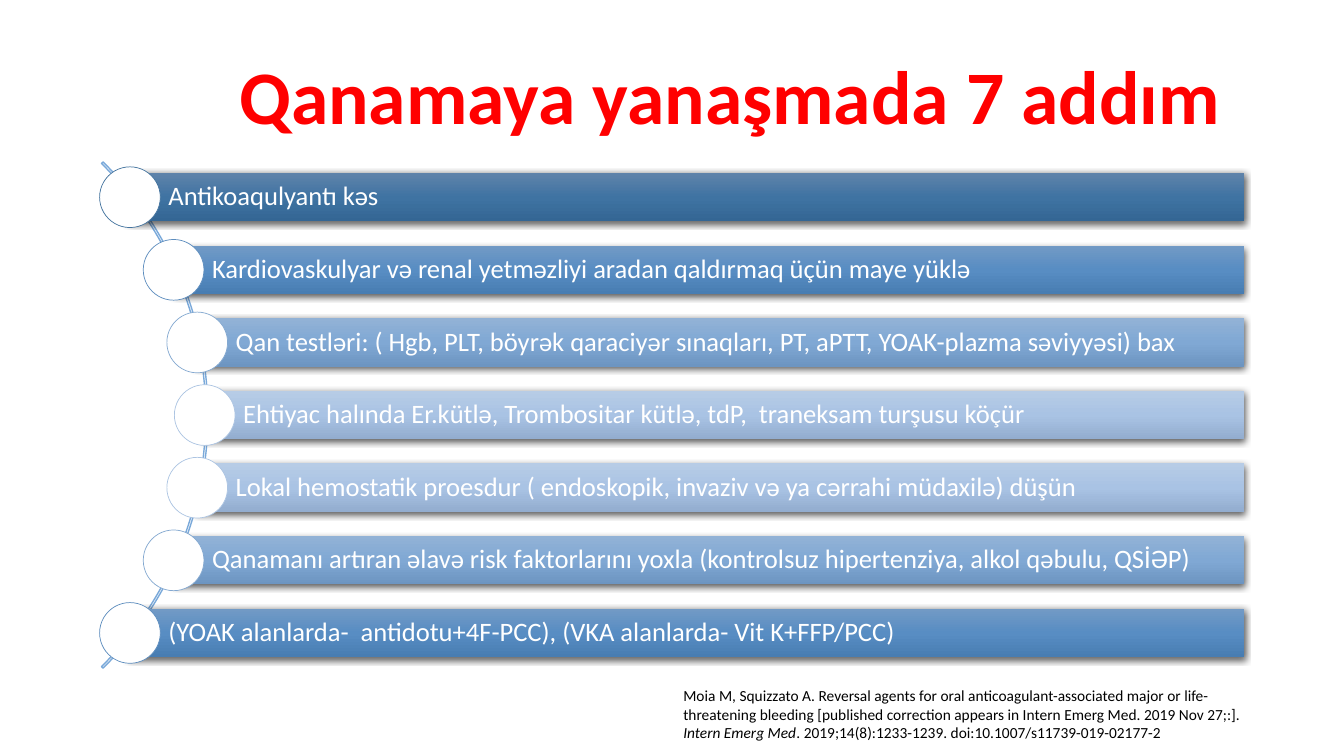
from copy import deepcopy
from math import sqrt

from pptx import Presentation
from pptx import util as u
from pptx.dml.color import RGBColor
from pptx.enum import shapes, text
from pptx.oxml import ns
from lxml import etree

COLORS = {"title": "FF0000", "white": "FFFFFF", "black": "000000", "arc": "7AA9DA"}

# Gradient top, middle and bottom, then the circle outline
TONES = {
    "dark": ("5F83AA", "3F73A2", "346694", "43739E"),
    "strong": ("729AC5", "588DC3", "487DB2", "5D8DBE"),
    "medium": ("92B2D6", "80A8D4", "6D95C1", "83A8D0"),
    "light": ("B7CCE6", "A9C3E4", "93ADCF", "ACC4E2"),
}

STEPS = [
    ("Antikoaqulyantı kəs", "dark"),
    ("Kardiovaskulyar və renal yetməzliyi aradan qaldırmaq üçün maye yüklə", "strong"),
    ("Qan testləri: ( Hgb, PLT, böyrək qaraciyər sınaqları, PT, aPTT, YOAK-plazma səviyyəsi) bax", "medium"),
    ("Ehtiyac halında Er.kütlə, Trombositar kütlə, tdP,  traneksam turşusu köçür", "light"),
    ("Lokal hemostatik proesdur ( endoskopik, invaziv və ya cərrahi müdaxilə) düşün", "light"),
    ("Qanamanı artıran əlavə risk faktorlarını yoxla (kontrolsuz hipertenziya, alkol qəbulu, QSİƏP)", "medium"),
    ("(YOAK alanlarda-  antidotu+4F-PCC), (VKA alanlarda- Vit K+FFP/PCC)", "strong"),
]


def add_text(para, content, size, color, bold=False, italic=False, spacing=None):
    span = para.add_run()
    span.text = content
    span.font.name = "Calibri"
    span.font.size = u.Pt(size)
    span.font.bold = bold
    span.font.italic = italic
    span.font.color.rgb = RGBColor.from_string(COLORS[color])
    para.alignment = text.PP_ALIGN.LEFT
    if spacing:
        para.line_spacing = spacing


def add_soft_shadow(shape):
    effects = shape._element.spPr.find(ns.qn("a:effectLst"))
    shadow = etree.SubElement(effects, ns.qn("a:outerShdw"), blurRad=str(u.Pt(4.5)),
                              dist=str(u.Pt(1.5)), dir="5400000", algn="ctr", rotWithShape="0")
    tint = etree.SubElement(shadow, ns.qn("a:srgbClr"), val=COLORS["black"])
    etree.SubElement(tint, ns.qn("a:alpha"), val="63000")


deck = Presentation()
deck.slide_width, deck.slide_height = u.Cm(33.87), u.Cm(19.05)
page = deck.slides.add_slide(deck.slide_layouts[5])

# Title
title = page.shapes.title
title.left, title.top, title.width, title.height = u.Cm(2.33), u.Cm(0.69), u.Cm(29.21), u.Cm(3.68)
frame = title.text_frame
frame.auto_size = text.MSO_AUTO_SIZE.NONE
frame.vertical_anchor = text.MSO_ANCHOR.MIDDLE
frame.margin_left = u.Cm(3.7)
add_text(frame.paragraphs[0], "Qanamaya yanaşmada 7 addım", 54, "title", bold=True, spacing=0.9)

# Arc behind the steps
CENTER_X, CENTER_Y, ARC_RADIUS = -3.78, 10.46, 9.02
arc = page.shapes.add_shape(shapes.MSO_SHAPE.BLOCK_ARC, u.Cm(CENTER_X - ARC_RADIUS),
                            u.Cm(CENTER_Y - ARC_RADIUS), u.Cm(2 * ARC_RADIUS), u.Cm(2 * ARC_RADIUS))
for index, value in enumerate((189, 27, 0.003)):
    arc.adjustments[index] = value
arc.shadow.inherit = False
arc.fill.background()
arc.line.color.rgb = RGBColor.from_string(COLORS["arc"])
arc.line.width = u.Pt(1)

# Steps: bars start on a circle around the arc's centre
STEP_RADIUS, PITCH, BAR_RIGHT, BAR_HEIGHT, DOT = 8.94, 1.83, 31.36, 1.22, 1.53
for index, (label, tone) in enumerate(STEPS):
    offset = (index - len(STEPS) // 2) * PITCH
    left = CENTER_X + sqrt(STEP_RADIUS ** 2 - offset ** 2)
    middle = CENTER_Y + offset
    *gradient, outline = TONES[tone]

    bar = page.shapes.add_shape(shapes.MSO_SHAPE.RECTANGLE, u.Cm(left), u.Cm(middle - BAR_HEIGHT / 2),
                                u.Cm(BAR_RIGHT - left), u.Cm(BAR_HEIGHT))
    bar.line.fill.background()
    bar.fill.gradient()
    bar.fill.gradient_angle = 270
    stop_list = bar._element.spPr.find(ns.qn("a:gradFill")).find(ns.qn("a:gsLst"))
    stop_list.append(deepcopy(stop_list[0]))
    for stop, position, color in zip(bar.fill.gradient_stops, (0, 0.5, 1), gradient):
        stop.position = position
        stop.color.rgb = RGBColor.from_string(color)
    bar.shadow.inherit = False
    add_soft_shadow(bar)

    frame = bar.text_frame
    frame.word_wrap = True
    frame.vertical_anchor = text.MSO_ANCHOR.MIDDLE
    frame.margin_left = u.Cm(0.97)
    frame.margin_right = frame.margin_top = frame.margin_bottom = u.Cm(0.13)
    add_text(frame.paragraphs[0], label, 19, "white", spacing=0.9)

    dot = page.shapes.add_shape(shapes.MSO_SHAPE.OVAL, u.Cm(left - DOT / 2), u.Cm(middle - DOT / 2),
                                u.Cm(DOT), u.Cm(DOT))
    dot.shadow.inherit = False
    dot.fill.solid()
    dot.fill.fore_color.rgb = RGBColor.from_string(COLORS["white"])
    dot.line.color.rgb = RGBColor.from_string(outline)
    dot.line.width = u.Pt(0.5)

# Citation
box = page.shapes.add_textbox(u.Cm(16.97), u.Cm(17.17), u.Cm(15.19), u.Cm(1.68))
box.text_frame.word_wrap = True
para = box.text_frame.paragraphs[0]
add_text(para, "Moia M, Squizzato A. Reversal agents for oral anticoagulant-associated major or "
         "life-threatening bleeding [published correction appears in Intern Emerg Med. 2019 Nov 27;:]. ",
         11, "black")
add_text(para, "Intern Emerg Med", 11, "black", italic=True)
add_text(para, ". 2019;14(8):1233-1239. doi:10.1007/s11739-019-02177-2", 11, "black")

deck.save("out.pptx")
